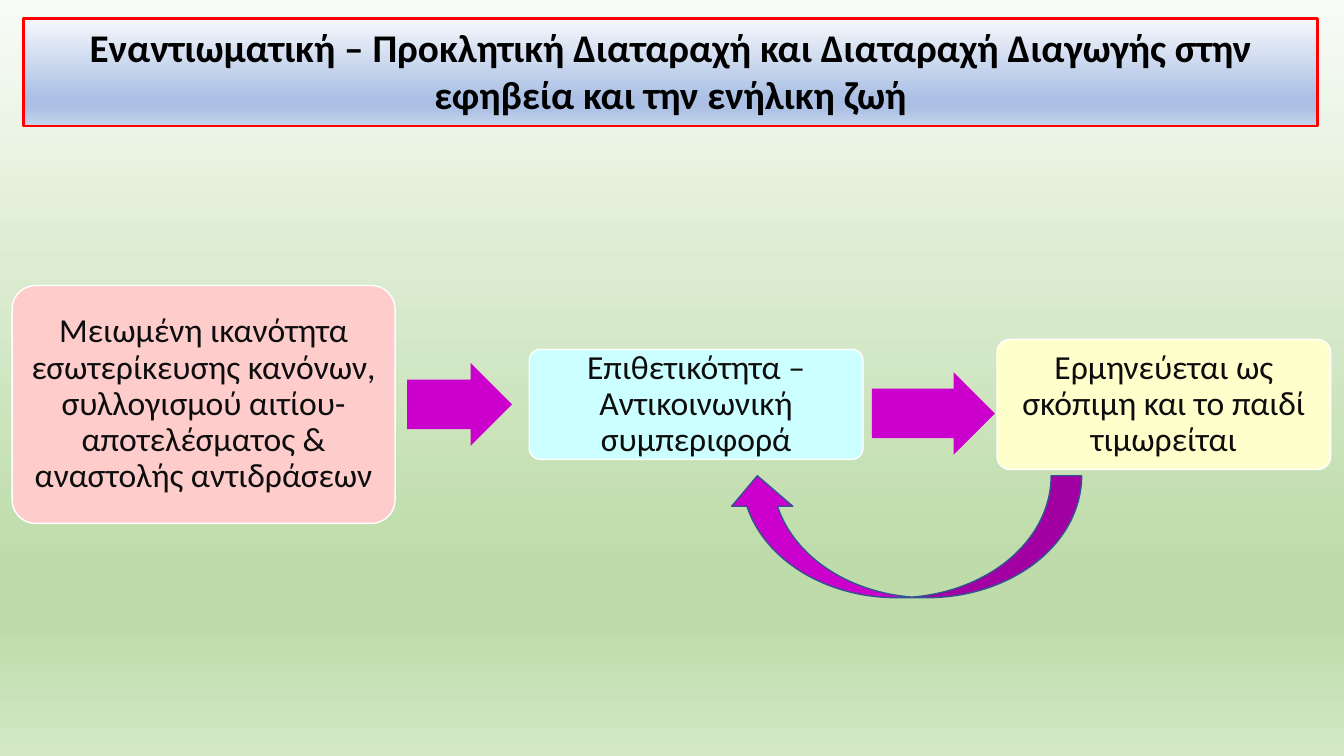
from lxml import etree
from pptx import Presentation
from pptx import util as u
from pptx.dml import color
from pptx.enum import shapes, text
from pptx.oxml import ns

WIDTH, HEIGHT = u.Inches(13.33), u.Inches(7.5)
FONT = "Calibri"
MAGENTA = "CC00CC"
GREENS = ["F8FBF6", "BEDCAA", "BEDCAA", "D4E8C6"]
BLUES = ["F6F8FC", "ABC0E4", "ABC0E4", "C7D5ED"]
STOPS = [0, 74, 83, 100]
ROW_MIDDLE = 53.5

# Row of the diagram: left, width, height in percent of the slide
CARDS = [
    (0.9, 28.5, 31.47, "FFCCCC",
     "Μειωμένη ικανότητα εσωτερίκευσης κανόνων, συλλογισμού "
     "αιτίου-αποτελέσματος & αναστολής αντιδράσεων"),
    (39.38, 24.83, 14.53, "CCFFFF", "Επιθετικότητα – Αντικοινωνική συμπεριφορά"),
    (74.18, 24.83, 17.2, "FFFFCC", "Ερμηνεύεται ως σκόπιμη και το παιδί τιμωρείται"),
]
ARROWS = [(30.3, 7.8, ROW_MIDDLE), (64.88, 9.15, 54.7)]
ARROW_HEIGHT = 10.93


def rgb(value):
    return color.RGBColor.from_string(value)


def fill_gradient(fill, element, colors):
    """Vertical gradient, top to bottom, with one colour per stop."""
    fill.gradient()
    fill.gradient_angle = 270
    stop_list = element.xpath(".//a:gsLst")[0]
    for stop in list(stop_list):
        stop_list.remove(stop)
    for position, value in zip(STOPS, colors):
        stop = etree.SubElement(stop_list, ns.qn("a:gs"), pos=str(position * 1000))
        etree.SubElement(stop, ns.qn("a:srgbClr"), val=value)


def add_box(slide, kind, left, top, width, height, fill=None, line=None, weight=1):
    """Preset shape placed in percent of the slide."""
    shape = slide.shapes.add_shape(
        kind, int(WIDTH * left / 100), int(HEIGHT * top / 100),
        int(WIDTH * width / 100), int(HEIGHT * height / 100))
    shape.shadow.inherit = False
    if fill:
        shape.fill.solid()
        shape.fill.fore_color.rgb = rgb(fill)
    if line:
        shape.line.color.rgb = rgb(line)
        shape.line.width = u.Pt(weight)
    else:
        shape.line.fill.background()
    return shape


def write(shape, words, size, value, anchor, bold=False, spacing=1.0):
    frame = shape.text_frame
    frame.word_wrap = True
    frame.vertical_anchor = anchor
    paragraph = frame.paragraphs[0]
    paragraph.alignment = text.PP_ALIGN.CENTER
    paragraph.line_spacing = spacing
    run = paragraph.add_run()
    run.text = words
    run.font.name = FONT
    run.font.size = u.Pt(size)
    run.font.bold = bold
    run.font.color.rgb = rgb(value)


def add_title(slide, words):
    title = add_box(slide, shapes.MSO_SHAPE.RECTANGLE, 1.73, 2.4, 96.3, 14.27,
                    line="FF0000", weight=2)
    fill_gradient(title.fill, title.element, BLUES)
    write(title, words, 28, "000000", text.MSO_ANCHOR.TOP, bold=True)


def add_card(slide, left, width, height, fill, words):
    card = add_box(slide, shapes.MSO_SHAPE.ROUNDED_RECTANGLE, left,
                   ROW_MIDDLE - height / 2, width, height, fill, "FFFFFF")
    card.adjustments[0] = 0.1
    frame = card.text_frame
    frame.margin_left = frame.margin_right = u.Inches(0.1)
    frame.margin_top = frame.margin_bottom = u.Inches(0.1)
    write(card, words, 24, "0D0D0D", text.MSO_ANCHOR.MIDDLE, spacing=0.9)


def add_arrow(slide, left, width, middle):
    arrow = add_box(slide, shapes.MSO_SHAPE.RIGHT_ARROW, left,
                    middle - ARROW_HEIGHT / 2, width, ARROW_HEIGHT, MAGENTA)
    arrow.adjustments[0] = 0.6
    arrow.adjustments[1] = 0.5


def add_return_arrow(slide):
    arrow = add_box(slide, shapes.MSO_SHAPE.CURVED_UP_ARROW,
                    54.08, 62.93, 26.4, 16.13, MAGENTA, "325491")
    arrow.element.spPr.get_or_add_xfrm().set("flipH", "1")


def main():
    presentation = Presentation()
    presentation.slide_width, presentation.slide_height = WIDTH, HEIGHT
    slide = presentation.slides.add_slide(presentation.slide_layouts[6])

    # Background and title
    fill_gradient(slide.background.fill, slide.element, GREENS)
    add_title(slide, "Εναντιωματική – Προκλητική Διαταραχή και Διαταραχή "
                     "Διαγωγής στην εφηβεία και την ενήλικη ζωή")

    # Chain of causes and the loop back
    for card in CARDS:
        add_card(slide, *card)
    for arrow in ARROWS:
        add_arrow(slide, *arrow)
    add_return_arrow(slide)

    presentation.save("out.pptx")


if __name__ == "__main__":
    main()
